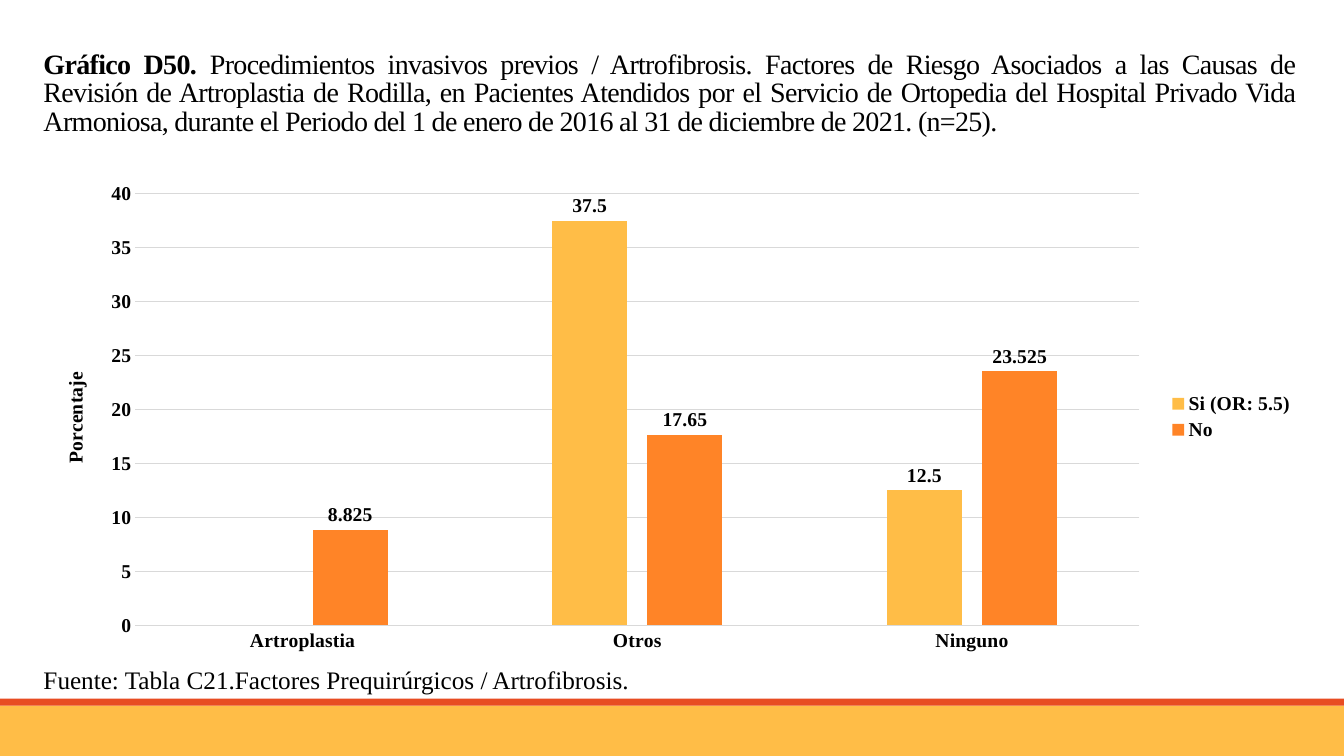
from lxml import etree
from pptx import Presentation
from pptx import util as u
from pptx.chart import data
from pptx.dml import color
from pptx.enum import chart as charts, shapes, text
from pptx.oxml import ns

BLACK = color.RGBColor(0x00, 0x00, 0x00)
AMBER = color.RGBColor(0xFF, 0xBD, 0x47)
ORANGE = color.RGBColor(0xFF, 0x84, 0x27)
RED = color.RGBColor(0xE8, 0x4C, 0x22)
GRAY = color.RGBColor(0xD9, 0xD9, 0xD9)

WIDTH, HEIGHT = 960, 540
LEFT, CONTENT_WIDTH = 24, 908


class SlideBuilder:
    """Draw bands, text and column charts on one slide in a shared style."""

    def __init__(self, slide, family="Times New Roman"):
        self.slide = slide
        self.family = family

    def style(self, font, size, bold=False):
        font.name, font.size, font.bold = self.family, u.Pt(size), bold
        font.color.rgb = BLACK

    def band(self, top, height, fill):
        band = self.slide.shapes.add_shape(
            shapes.MSO_SHAPE.RECTANGLE, 0, u.Pt(top), u.Pt(WIDTH), u.Pt(height))
        band.shadow.inherit = False
        band.fill.solid()
        band.fill.fore_color.rgb = fill
        band.line.fill.background()

    def text(self, top, width, height, parts, size, anchor,
             align=text.PP_ALIGN.LEFT, line_spacing=1.0, tracking=0):
        frame = self.slide.shapes.add_textbox(
            u.Pt(LEFT), u.Pt(top), u.Pt(width), u.Pt(height)).text_frame
        frame.word_wrap = True
        frame.vertical_anchor = anchor
        paragraph = frame.paragraphs[0]
        paragraph.alignment = align
        paragraph.line_spacing = line_spacing
        for words, bold in parts:
            run = paragraph.add_run()
            run.text = words
            self.style(run.font, size, bold)
            if tracking:
                run.font._element.set("spc", str(int(tracking * 100)))

    def place(self, parent, index, **fractions):
        for old in parent.findall(ns.qn("c:layout")):
            parent.remove(old)
        layout = etree.Element(ns.qn("c:layout"))
        manual = etree.SubElement(layout, ns.qn("c:manualLayout"))
        if "w" in fractions:
            etree.SubElement(manual, ns.qn("c:layoutTarget")).set("val", "inner")
        for mode in ("xMode", "yMode"):
            etree.SubElement(manual, ns.qn(f"c:{mode}")).set("val", "edge")
        for key, value in fractions.items():
            etree.SubElement(manual, ns.qn(f"c:{key}")).set("val", str(value))
        parent.insert(index, layout)

    def columns(self, top, height, categories, series, value_title, size=14):
        values = data.CategoryChartData()
        values.categories = categories
        for name, numbers, _ in series:
            values.add_series(name, numbers)
        chart = self.slide.shapes.add_chart(
            charts.XL_CHART_TYPE.COLUMN_CLUSTERED, u.Pt(LEFT), u.Pt(top),
            u.Pt(CONTENT_WIDTH), u.Pt(height), values).chart
        self.style(chart.font, size, True)
        chart.has_title = False
        chart.has_legend = True
        chart.legend.position = charts.XL_LEGEND_POSITION.RIGHT
        chart.legend.include_in_layout = False
        self.style(chart.legend.font, size, True)

        plot = chart.plots[0]
        plot.gap_width, plot.overlap, plot.vary_by_categories = 219, -27, False
        for bars, (_, _, fill) in zip(plot.series, series):
            bars.format.fill.solid()
            bars.format.fill.fore_color.rgb = fill
            bars.invert_if_negative = False
            labels = bars.data_labels
            labels.show_value = True
            labels.position = charts.XL_LABEL_POSITION.OUTSIDE_END
            self.style(labels.font, size, True)

        for axis in (chart.category_axis, chart.value_axis):
            axis.major_tick_mark = charts.XL_TICK_MARK.NONE
            axis.minor_tick_mark = charts.XL_TICK_MARK.NONE
            self.style(axis.tick_labels.font, size, True)
        value_axis = chart.value_axis
        value_axis.minimum_scale, value_axis.maximum_scale = 0, 40
        value_axis.major_unit = 5
        value_axis.format.line.fill.background()
        for line in (chart.category_axis.format.line,
                     value_axis.major_gridlines.format.line):
            line.color.rgb = GRAY
            line.width = u.Pt(0.75)

        value_axis.has_title = True
        heading = value_axis.axis_title.text_frame
        heading.text = value_title
        self.style(heading.paragraphs[0].runs[0].font, size, True)
        self.place(value_axis.axis_title._element, 1, x=0.02, y=0.4)
        self.place(chart._chartSpace.chart.plotArea, 0,
                   x=0.08, y=0.04, w=0.79, h=0.89)


def main():
    deck = Presentation()
    deck.slide_width, deck.slide_height = u.Pt(WIDTH), u.Pt(HEIGHT)
    page = SlideBuilder(deck.slides.add_slide(deck.slide_layouts[6]))

    page.band(504, 36, AMBER)
    page.band(499, 5, RED)
    page.text(
        10, CONTENT_WIDTH, 114.5,
        [("Gráfico D50. ", True),
         ("Procedimientos invasivos previos / Artrofibrosis. Factores de Riesgo "
          "Asociados a las Causas de Revisión de Artroplastia de Rodilla, en "
          "Pacientes Atendidos por el Servicio de Ortopedia del Hospital Privado "
          "Vida Armoniosa, durante el Periodo del 1 de enero de 2016 al 31 de "
          "diciembre de 2021. (n=25).", False)],
        20, text.MSO_ANCHOR.MIDDLE, text.PP_ALIGN.JUSTIFY, 0.85, -0.5)
    page.columns(
        124.5, 346.5, ("Artroplastia", "Otros", "Ninguno"),
        [("Si (OR: 5.5)", (None, 37.5, 12.5), AMBER),
         ("No", (8.825, 17.65, 23.525), ORANGE)],
        "Porcentaje")
    page.text(
        471, 537, 29,
        [("Fuente: Tabla C21.Factores Prequirúrgicos / Artrofibrosis.", False)],
        18, text.MSO_ANCHOR.TOP)
    deck.save("out.pptx")


if __name__ == "__main__":
    main()
